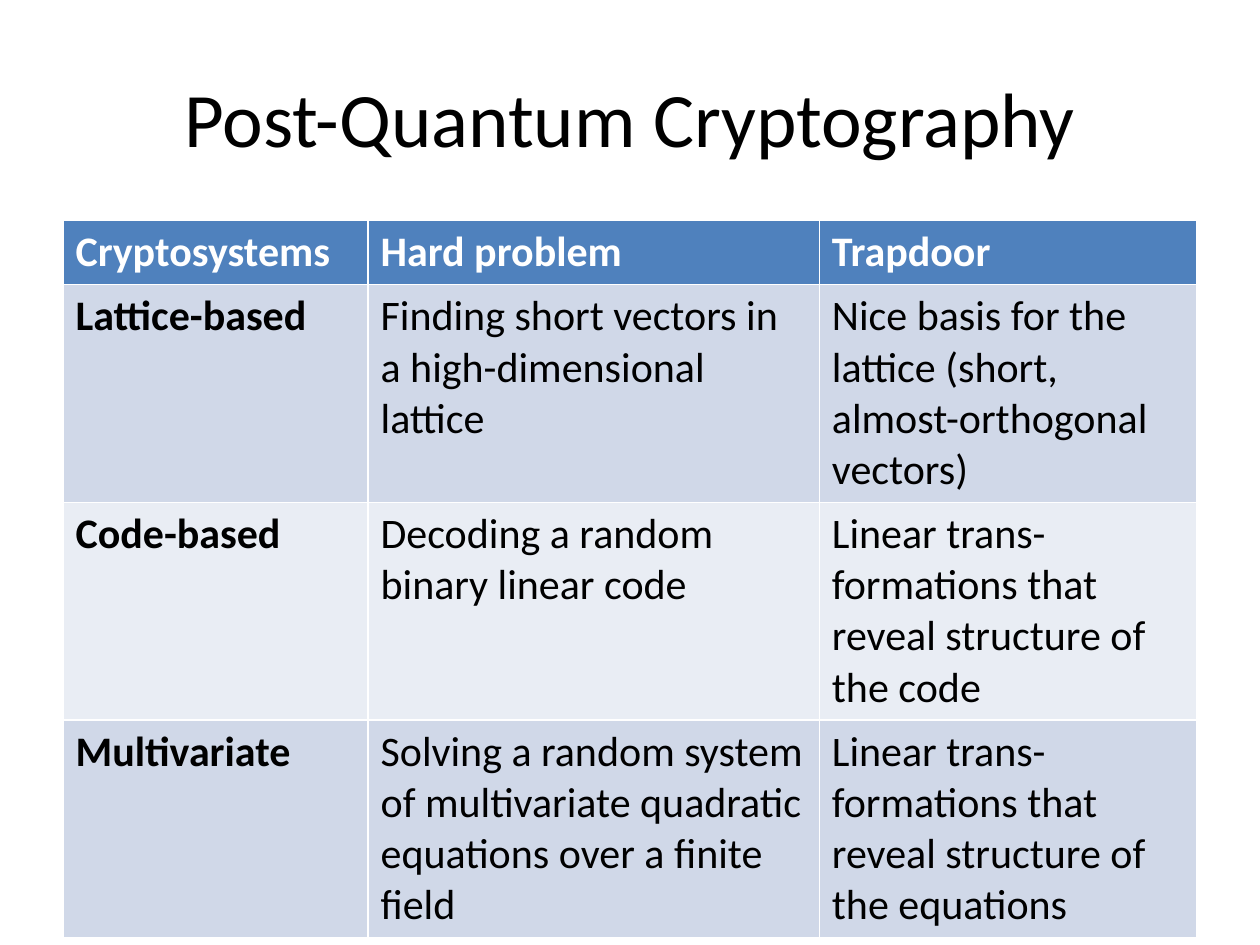
from pptx import Presentation
from pptx.dml.color import RGBColor
from pptx.enum.text import MSO_ANCHOR as Anchor, PP_ALIGN as Align
from pptx.util import Cm, Pt

WHITE = RGBColor(0xFF, 0xFF, 0xFF)
BLACK = RGBColor(0x00, 0x00, 0x00)
HEADER_BLUE = RGBColor(0x4F, 0x81, 0xBD)
BANDS = [RGBColor(0xE9, 0xED, 0xF4), RGBColor(0xD0, 0xD8, 0xE8)]
FONT = "Calibri"

TITLE = "Post-Quantum Cryptography"
SCHEMES = [
    ("Cryptosystems", "Hard problem", "Trapdoor"),
    ("Lattice-based",
     "Finding short vectors in a high-dimensional lattice",
     "Nice basis for the lattice (short, almost-orthogonal vectors)"),
    ("Code-based",
     "Decoding a random binary linear code",
     "Linear trans-formations that reveal structure of the code"),
    ("Multivariate",
     "Solving a random system of multivariate quadratic equations over a finite field",
     "Linear trans-formations that reveal structure of the equations"),
]
COLUMN_SHARES = [0.269, 0.398, 0.333]
HEADER_HEIGHT = Cm(1.27)


def style_run(run, size, color, bold=False):
    run.font.name = FONT
    run.font.size = Pt(size)
    run.font.bold = bold
    run.font.color.rgb = color


def place_title(slide, left, top, width, height):
    title = slide.shapes.title
    title.left, title.top, title.width, title.height = left, top, width, height
    frame = title.text_frame
    frame.text = TITLE
    frame.vertical_anchor = Anchor.MIDDLE
    heading = frame.paragraphs[0]
    heading.alignment = Align.CENTER
    style_run(heading.runs[0], 44, BLACK)


def place_schemes(slide, left, top, width, height):
    schemes = slide.shapes.add_table(
        len(SCHEMES), len(COLUMN_SHARES), left, top, width, height).table
    for column, share in zip(schemes.columns, COLUMN_SHARES):
        column.width = int(width * share)
    body_height = (height - HEADER_HEIGHT) // (len(SCHEMES) - 1)
    for r, entries in enumerate(SCHEMES):
        is_header = r == 0
        schemes.rows[r].height = HEADER_HEIGHT if is_header else body_height
        for c, entry in enumerate(entries):
            cell = schemes.cell(r, c)
            cell.fill.solid()
            cell.fill.fore_color.rgb = HEADER_BLUE if is_header else BANDS[r % 2]
            cell.text_frame.text = entry
            style_run(cell.text_frame.paragraphs[0].runs[0], 24,
                      WHITE if is_header else BLACK, is_header or c == 0)


def main():
    deck = Presentation()
    deck.slide_width, deck.slide_height = Cm(25.4), Cm(19.05)
    slide = deck.slides.add_slide(deck.slide_layouts[5])
    margin = Cm(1.27)
    content_width = deck.slide_width - 2 * margin
    place_title(slide, margin, Cm(0.76), content_width, Cm(3.18))
    place_schemes(slide, margin, Cm(4.45), content_width, Cm(14.4))
    deck.save("out.pptx")


if __name__ == "__main__":
    main()
